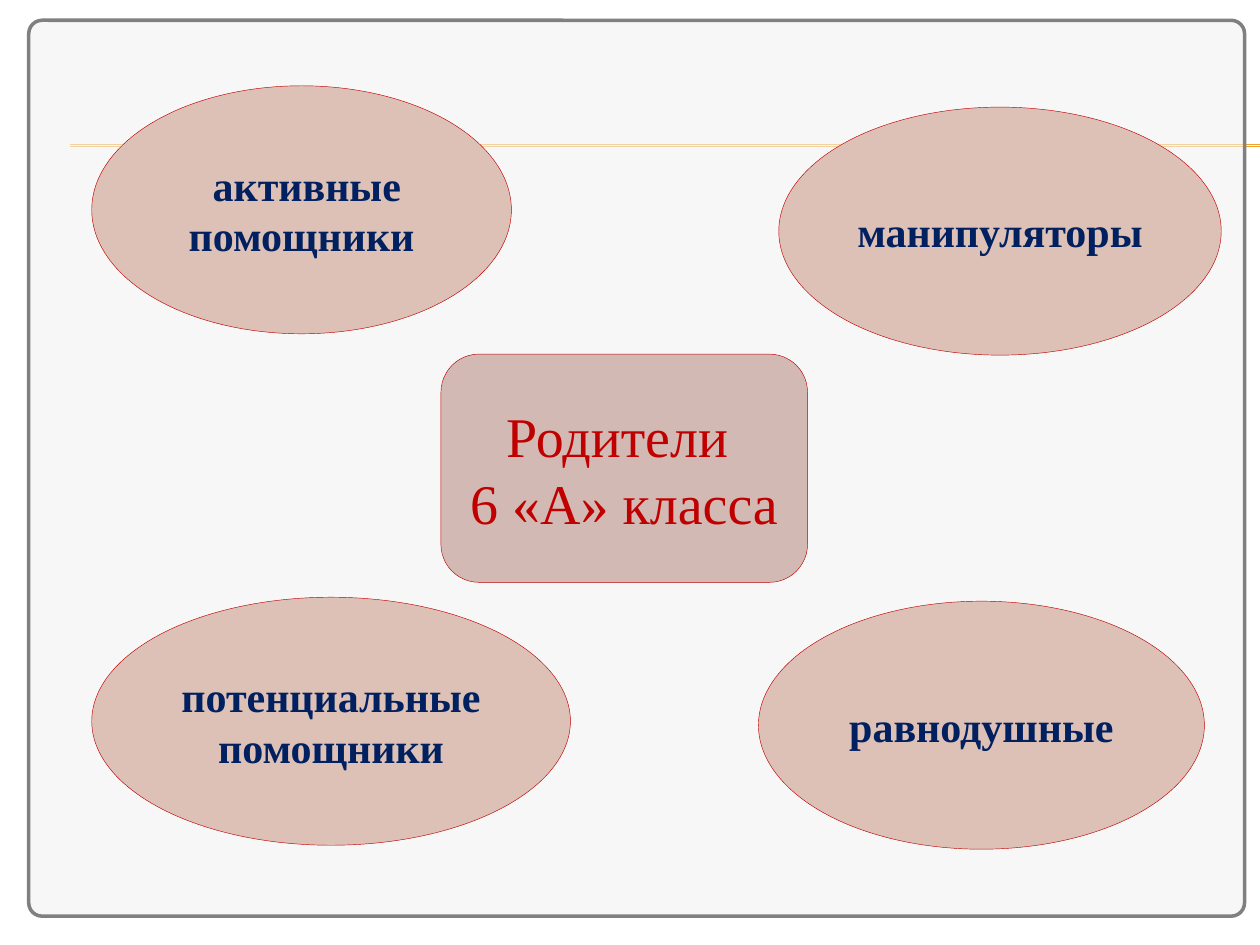
from lxml import etree
from pptx import Presentation
from pptx.dml.color import RGBColor
from pptx.enum.shapes import MSO_CONNECTOR, MSO_SHAPE as SHAPE
from pptx.enum.text import MSO_ANCHOR, PP_ALIGN
from pptx.oxml.ns import qn
from pptx.util import Cm, Pt

PANEL_GRAY = RGBColor(0xF2, 0xF2, 0xF2)
BORDER_GRAY = RGBColor(0x80, 0x80, 0x80)
ORANGE = RGBColor(0xF0, 0xA2, 0x2E)
RED = RGBColor(0xC0, 0x00, 0x00)
NAVY = RGBColor(0x00, 0x20, 0x60)
BROWN = RGBColor(0x91, 0x58, 0x1F)
ROSE = RGBColor(0xD3, 0xB9, 0xB3)
PINK = RGBColor(0xDD, 0xC0, 0xB6)

SLIDE_W, SLIDE_H = 25.4, 19.05
GROUP_H = 5

# Label, left, top and width of each group of parents, in cm
GROUPS = [
    (" активные\nпомощники", 1.85, 1.73, 8.46),
    ("потенциальные помощники", 1.85, 12.04, 9.65),
    ("манипуляторы", 15.7, 2.16, 8.92),
    ("равнодушные", 15.29, 12.12, 8.99),
]


def add_filled(slide, kind, box, fill, line, line_width):
    sp = slide.shapes.add_shape(kind, *(Cm(v) for v in box))
    sp.shadow.inherit = False
    sp.fill.solid()
    sp.fill.fore_color.rgb = fill
    sp.line.color.rgb = line
    sp.line.width = Pt(line_width)
    return sp


def outline_run(r, color):
    """Draw a 0.75 pt outline around the letters of a run."""
    ln = etree.Element(qn("a:ln"), w=str(Pt(0.75)))
    fill = etree.SubElement(ln, qn("a:solidFill"))
    etree.SubElement(fill, qn("a:srgbClr"), val=str(color))
    r.font._element.insert(0, ln)


def write_label(sp, text, size, color, outline, bold=False):
    tf = sp.text_frame
    tf.text = text
    tf.word_wrap = True
    tf.vertical_anchor = MSO_ANCHOR.MIDDLE
    for p in tf.paragraphs:
        p.alignment = PP_ALIGN.CENTER
        for r in p.runs:
            r.font.name = "Times New Roman"
            r.font.size = Pt(size)
            r.font.bold = bold
            r.font.color.rgb = color
            outline_run(r, outline)


def add_rule(slide, left, top, width):
    """Draw the double orange rule."""
    for y in (top, top + 0.03):
        line = slide.shapes.add_connector(
            MSO_CONNECTOR.STRAIGHT, Cm(left), Cm(y), Cm(left + width), Cm(y))
        line.line.color.rgb = ORANGE
        line.line.width = Pt(0.75)
        etree.SubElement(line._element.spPr, qn("a:effectLst"))


def add_panel(slide, box):
    sp = add_filled(slide, SHAPE.ROUNDED_RECTANGLE, box,
                    PANEL_GRAY, BORDER_GRAY, 2)
    sp.adjustments[0] = 0.015
    color = sp._element.spPr.find(qn("a:solidFill"))[0]
    etree.SubElement(color, qn("a:alpha"), val="60000")


def add_center(slide, box):
    sp = add_filled(slide, SHAPE.ROUNDED_RECTANGLE, box, ROSE, RED, 0.25)
    write_label(sp, "Родители \n6 «А» класса", 32, RED, BROWN)


def add_group(slide, text, box):
    sp = add_filled(slide, SHAPE.OVAL, box, PINK, RED, 0.25)
    write_label(sp, text, 24, NAVY, NAVY, bold=True)


def main():
    prs = Presentation()
    prs.slide_width, prs.slide_height = Cm(SLIDE_W), Cm(SLIDE_H)
    slide = prs.slides.add_slide(prs.slide_layouts[6])
    add_rule(slide, 1.42, 2.92, SLIDE_W - 1.42)
    add_panel(slide, (0.58, 0.41, 24.51, 18.06))
    add_center(slide, (8.89, 7.14, 7.39, 4.6))
    for text, left, top, width in GROUPS:
        add_group(slide, text, (left, top, width, GROUP_H))
    prs.save("out.pptx")


if __name__ == "__main__":
    main()
